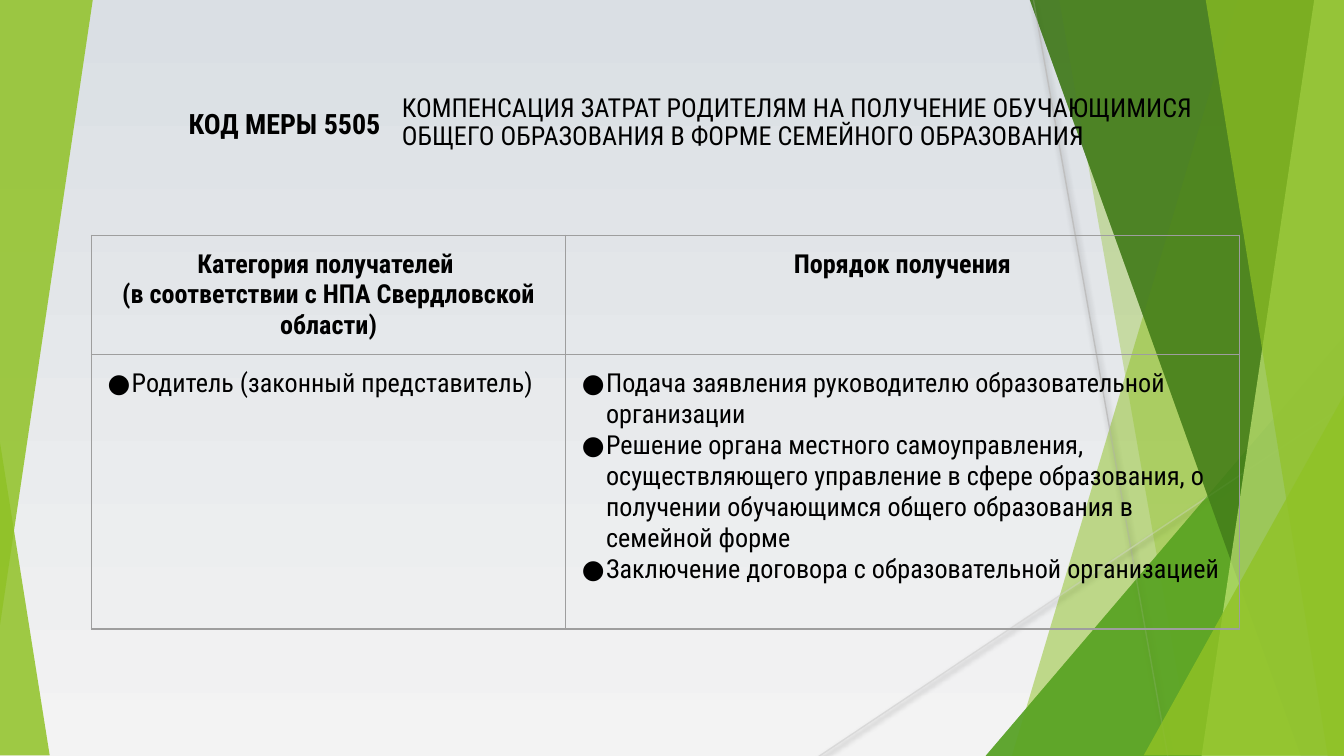
from dataclasses import dataclass
from lxml.etree import SubElement
from pptx import Presentation
from pptx.dml.color import RGBColor
from pptx.enum.shapes import MSO_CONNECTOR, MSO_SHAPE
from pptx.enum.text import MSO_ANCHOR, MSO_AUTO_SIZE, PP_ALIGN
from pptx.oxml.ns import qn
from pptx.util import Inches, Pt

FONT = "Roboto Condensed"
BLACK = "000000"
GREEN = "90C226"
EDGE = 10
TOP, BASE = -0.01, EDGE * 9 / 16


@dataclass
class Blade:
    head: float
    foot: float
    color: str
    alpha: int


@dataclass
class Wedge:
    left: float
    top: float
    width: float
    height: float
    peak: int
    color: str
    alpha: int
    turn: int = 0


@dataclass
class Ray:
    start: tuple[float, float]
    end: tuple[float, float]
    color: str


LEAVES = [
    Blade(9.21, 7.53, GREEN, 30),
    Blade(7.88, 8.87, GREEN, 20),
    Wedge(7.33, 2.5, 2.67, 3.13, 1, "54A021", 72),
    Blade(7.66, 9.68, "3F7819", 70),
    Blade(9.78, 8.94, "C0E474", 70),
    Blade(8.97, 9.88, GREEN, 65),
    Wedge(8.51, 2.94, 1.49, 2.68, 1, GREEN, 80),
]
LOW = Wedge(0, 3.29, 0.37, 2.33, 0, GREEN, 85)
HIGH = Wedge(0, 0, 0.69, 4.65, 1, GREEN, 85, 180)
RAYS = [
    Ray((7.69, 0), (8.69, 5.63), "BFBFBF"),
    Ray((10, 3.02), (6.09, 5.63), "D9D9D9"),
]
HEADS = [
    ["Категория получателей ", "(в соответствии с НПА Свердловской области)"],
    ["Порядок получения"],
]
LISTS = [
    ["Родитель (законный представитель)"],
    [
        "Подача заявления руководителю образовательной организации",
        "Решение органа местного самоуправления, осуществляющего управление в сфере "
        "образования, о получении обучающимся общего образования в семейной форме",
        "Заключение договора с образовательной организацией",
    ],
]


def tint(color, code: str) -> None:
    color.rgb = RGBColor.from_string(code)


def draw_leaf(slide, leaf: Blade | Wedge) -> None:
    if isinstance(leaf, Blade):
        spots = [(leaf.head, TOP), (EDGE, TOP), (EDGE, BASE), (leaf.foot, BASE)]
        first, *rest = [(Inches(x), Inches(y)) for x, y in spots]
        form = slide.shapes.build_freeform(*first)
        form.add_line_segments(rest, close=True)
        shape = form.convert_to_shape()
    else:
        box = map(Inches, (leaf.left, leaf.top, leaf.width, leaf.height))
        shape = slide.shapes.add_shape(MSO_SHAPE.ISOSCELES_TRIANGLE, *box)
        shape.adjustments[0] = leaf.peak
        shape.rotation = leaf.turn
    shape.shadow.inherit = False
    shape.line.fill.background()
    shape.fill.solid()
    tint(shape.fill.fore_color, leaf.color)
    tone = shape.element.spPr.find(".//" + qn("a:srgbClr"))
    SubElement(tone, qn("a:alpha"), val=str(leaf.alpha * 1000))


def draw_ray(slide, ray: Ray) -> None:
    ends = map(Inches, ray.start + ray.end)
    line = slide.shapes.add_connector(MSO_CONNECTOR.STRAIGHT, *ends)
    line.line.width = Pt(0.75)
    tint(line.line.color, ray.color)
    glow = SubElement(line.element.spPr, qn("a:effectLst"))
    shade = SubElement(glow, qn("a:outerShdw"), blurRad=str(Pt(3.1)),
                       dist=str(Pt(1.6)), dir="5400000", rotWithShape="0")
    tone = SubElement(shade, qn("a:srgbClr"), val=BLACK)
    SubElement(tone, qn("a:alpha"), val="38000")


def add_run(para, text: str, size: float = 14, bold: bool = False) -> None:
    run = para.add_run()
    run.text = text
    run.font.name = FONT
    run.font.size = Pt(size)
    run.font.bold = bold
    tint(run.font.color, BLACK)


def set_frame(shape, side: float, edge: float):
    frame = shape.text_frame
    frame.word_wrap = True
    frame.auto_size = MSO_AUTO_SIZE.NONE
    frame.vertical_anchor = MSO_ANCHOR.MIDDLE
    frame.margin_left = frame.margin_right = Inches(side)
    frame.margin_top = frame.margin_bottom = Inches(edge)
    return frame.paragraphs[0]


def add_dot(para) -> None:
    props = para._p.get_or_add_pPr()
    props.set("marL", str(Inches(0.2)))
    props.set("indent", str(Inches(-0.18)))
    tone = SubElement(props, qn("a:buClr"))
    SubElement(tone, qn("a:srgbClr"), val=BLACK)
    SubElement(props, qn("a:buFont"), typeface=FONT)
    SubElement(props, qn("a:buChar"), char="●")


def style_cell(cell) -> None:
    cell.fill.background()
    cell.vertical_anchor = MSO_ANCHOR.TOP
    cell.margin_left = cell.margin_right = Inches(0.1)
    cell.margin_top = cell.margin_bottom = Inches(0.1)
    props = cell._tc.get_or_add_tcPr()
    for spot, side in enumerate(("lnL", "lnR", "lnT", "lnB")):
        line = SubElement(props, qn("a:" + side), w=str(Pt(0.75)))
        fill = SubElement(line, qn("a:solidFill"))
        SubElement(fill, qn("a:srgbClr"), val="9E9E9E")
        props.insert(spot, line)


def draw_table(slide) -> None:
    box = map(Inches, (0.68, 1.75, 8.54, 2.92))
    table = slide.shapes.add_table(2, 2, *box).table
    table.first_row = table.horz_banding = False
    for col, width in zip(table.columns, (3.53, 5.01)):
        col.width = Inches(width)
    for row, height in zip(table.rows, (0.88, 2.04)):
        row.height = Inches(height)
    for cell in table.iter_cells():
        style_cell(cell)
    for col, (head, items) in enumerate(zip(HEADS, LISTS)):
        para = table.cell(0, col).text_frame.paragraphs[0]
        para.alignment = PP_ALIGN.CENTER
        for spot, text in enumerate(head):
            if spot:
                para.add_line_break()
            add_run(para, text, bold=True)
        frame = table.cell(1, col).text_frame
        for spot, text in enumerate(items):
            para = frame.add_paragraph() if spot else frame.paragraphs[0]
            add_dot(para)
            add_run(para, text)


def draw_title(slide) -> None:
    title = slide.shapes.title
    title.left, title.top = Inches(2.92), Inches(0.53)
    title.width, title.height = Inches(6.3), Inches(0.77)
    title.element.getparent().append(title.element)
    para = set_frame(title, 0.07, 0.04)
    para.alignment = PP_ALIGN.LEFT
    para.line_spacing = 0.9
    add_run(para, "КОМПЕНСАЦИЯ ЗАТРАТ РОДИТЕЛЯМ НА ПОЛУЧЕНИЕ ОБУЧАЮЩИМИСЯ "
                  "ОБЩЕГО ОБРАЗОВАНИЯ В ФОРМЕ СЕМЕЙНОГО ОБРАЗОВАНИЯ")


def draw_code(slide) -> None:
    box = map(Inches, (0.82, 0.53, 2.11, 0.77))
    para = set_frame(slide.shapes.add_textbox(*box), 0.1, 0.1)
    para.alignment = PP_ALIGN.RIGHT
    add_run(para, "КОД МЕРЫ 5505", 15, True)


def main() -> None:
    deck = Presentation()
    deck.slide_width, deck.slide_height = Inches(EDGE), Inches(BASE)
    slide = deck.slides.add_slide(deck.slide_layouts[5])
    fill = slide.background.fill
    fill.gradient()
    fill.gradient_angle = 270
    for stop, code in zip(fill.gradient_stops, ("DADFE4", "F3F3F3")):
        tint(stop.color, code)
    for leaf in LEAVES + [LOW]:
        draw_leaf(slide, leaf)
    for ray in RAYS:
        draw_ray(slide, ray)
    for leaf in LEAVES + [HIGH]:
        draw_leaf(slide, leaf)
    draw_table(slide)
    draw_title(slide)
    draw_code(slide)
    deck.save("out.pptx")


if __name__ == "__main__":
    main()
